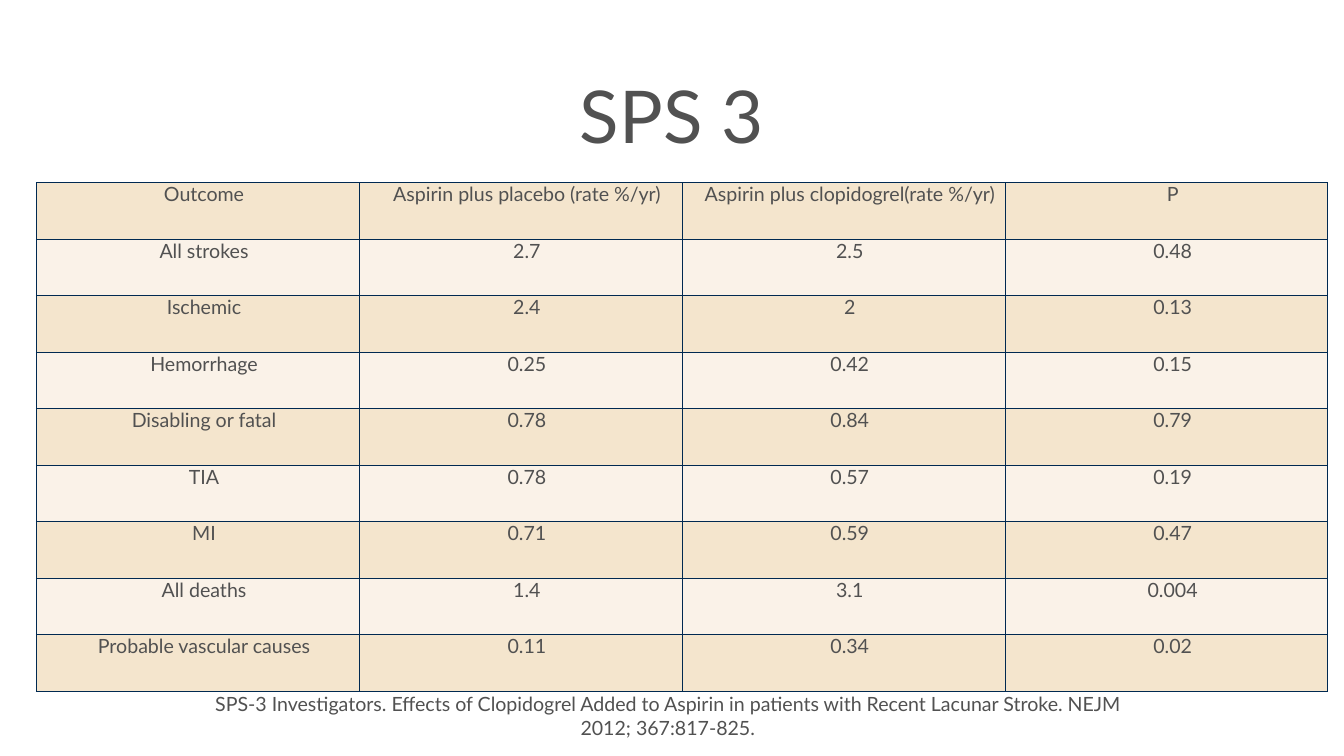
import dataclasses

import lxml.etree
import pptx
import pptx.dml.color
import pptx.enum.text
import pptx.oxml.ns
import pptx.util


@dataclasses.dataclass(frozen=True)
class Theme:
    font: str = "Lato"
    ink: str = "515151"
    rule: str = "002951"
    bands: tuple = ("F4E5CD", "FAF2E8")
    title_size: int = 104
    body_size: int = 28
    rule_width: int = 1
    inset: float = 0.08
    first_line: float = 0.25


THEME = Theme()
SLIDE_WIDTH = pptx.util.Inches(26.67)
SLIDE_HEIGHT = pptx.util.Inches(15)

TITLE = "SPS 3"
OUTCOMES = [
    ("Outcome", "Aspirin plus placebo (rate %/yr)", "Aspirin plus clopidogrel(rate %/yr)", "P"),
    ("All strokes", "2.7", "2.5", "0.48"),
    ("Ischemic", "2.4", "2", "0.13"),
    ("Hemorrhage", "0.25", "0.42", "0.15"),
    ("Disabling or fatal", "0.78", "0.84", "0.79"),
    ("TIA", "0.78", "0.57", "0.19"),
    ("MI", "0.71", "0.59", "0.47"),
    ("All deaths", "1.4", "3.1", "0.004"),
    ("Probable vascular causes", "0.11", "0.34", "0.02"),
]
CITATION = (
    "SPS-3 Investigators. Effects of Clopidogrel Added to Aspirin in patients "
    "with Recent Lacunar Stroke. NEJM 2012; 367:817-825."
)


def box(left, top, width, height):
    """Turn percentages of the slide's size into lengths."""
    return (
        round(SLIDE_WIDTH * left / 100),
        round(SLIDE_HEIGHT * top / 100),
        round(SLIDE_WIDTH * width / 100),
        round(SLIDE_HEIGHT * height / 100),
    )


def write_centred(frame, words, size):
    paragraph = frame.paragraphs[0]
    paragraph.alignment = pptx.enum.text.PP_ALIGN.CENTER
    run = paragraph.add_run()
    run.text = words
    run.font.name = THEME.font
    run.font.size = pptx.util.Pt(size)
    run.font.color.rgb = pptx.dml.color.RGBColor.from_string(THEME.ink)
    return paragraph


def fill_text_region(region, words, size):
    frame = region.text_frame
    frame.word_wrap = True
    frame.auto_size = pptx.enum.text.MSO_AUTO_SIZE.NONE
    frame.vertical_anchor = pptx.enum.text.MSO_ANCHOR.MIDDLE
    inset = pptx.util.Inches(THEME.inset)
    frame.margin_left = frame.margin_right = inset
    frame.margin_top = frame.margin_bottom = inset
    write_centred(frame, words, size)


def add_title(slide, area):
    title = slide.shapes.title
    title.left, title.top, title.width, title.height = area
    fill_text_region(title, TITLE, THEME.title_size)


def rule_cell(cell):
    """Draw the four borders; call before filling, as borders come first in the XML."""
    qn = pptx.oxml.ns.qn
    properties = cell._tc.get_or_add_tcPr()
    for side in ("lnL", "lnR", "lnT", "lnB"):
        line = lxml.etree.SubElement(properties, qn(f"a:{side}"))
        line.set("w", str(pptx.util.Pt(THEME.rule_width)))
        solid = lxml.etree.SubElement(line, qn("a:solidFill"))
        lxml.etree.SubElement(solid, qn("a:srgbClr")).set("val", THEME.rule)


def format_cell(cell, words, band):
    cell.margin_left = cell.margin_right = 0
    cell.margin_top = cell.margin_bottom = 0
    rule_cell(cell)
    cell.fill.solid()
    cell.fill.fore_color.rgb = pptx.dml.color.RGBColor.from_string(band)
    paragraph = write_centred(cell.text_frame, words, THEME.body_size)
    indents = paragraph._p.get_or_add_pPr()
    indents.set("marL", "0")
    indents.set("indent", str(pptx.util.Inches(THEME.first_line)))


def add_outcomes(slide, area):
    outcomes = slide.shapes.add_table(len(OUTCOMES), len(OUTCOMES[0]), *area).table
    for row, entries in enumerate(OUTCOMES):
        band = THEME.bands[row % len(THEME.bands)]
        for column, words in enumerate(entries):
            format_cell(outcomes.cell(row, column), words, band)


def add_citation(slide, area):
    fill_text_region(slide.shapes.add_textbox(*area), CITATION, THEME.body_size)


def main():
    presentation = pptx.Presentation()
    presentation.slide_width = SLIDE_WIDTH
    presentation.slide_height = SLIDE_HEIGHT
    title_only = presentation.slide_layouts[5]
    slide = presentation.slides.add_slide(title_only)
    add_title(slide, box(17.02, 5.33, 65.92, 19.53))
    add_outcomes(slide, box(2.7, 24.13, 96.1, 67.27))
    add_citation(slide, box(13.8, 92.8, 71.77, 3.8))
    presentation.save("out.pptx")


if __name__ == "__main__":
    main()
